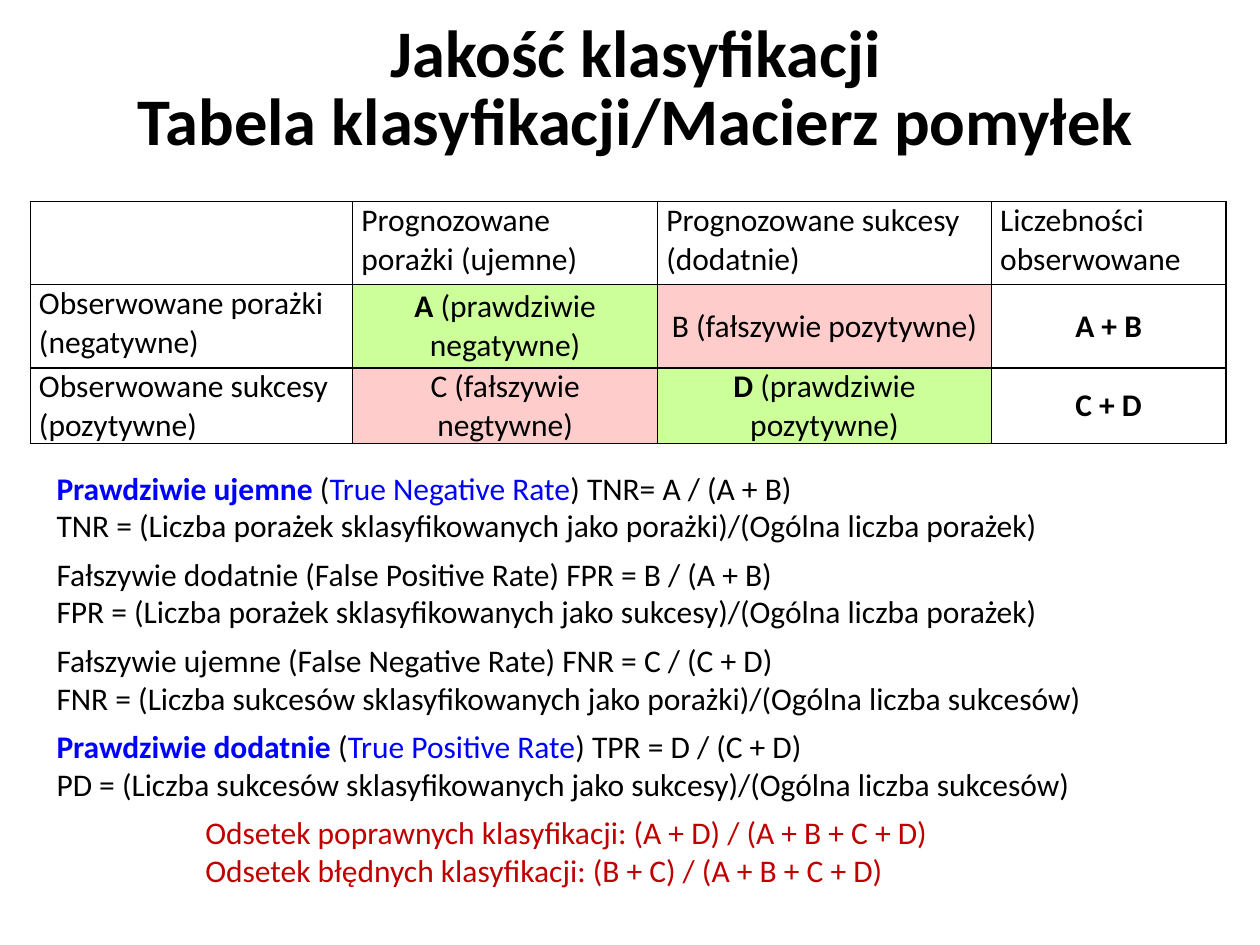
import dataclasses

import lxml.etree
import pptx
import pptx.dml.color
import pptx.enum.text
import pptx.oxml.ns
import pptx.util

Pt = pptx.util.Pt
ALIGN = pptx.enum.text.PP_ALIGN
ANCHOR = pptx.enum.text.MSO_ANCHOR


@dataclasses.dataclass(frozen=True)
class Theme:
    font: str = "Calibri"
    title_size: int = 38
    title_spacing: int = 39
    body_size: int = 18
    text: str = "000000"
    key_term: str = "0000FF"
    summary: str = "C00000"
    correct: str = "CCFF99"
    wrong: str = "FFCCCC"
    border: str = "000000"


THEME = Theme()

TITLE = ["Jakość klasyfikacji", "Tabela klasyfikacji/Macierz pomyłek"]

# A run is (text, bold, colour).
PLAIN = (False, THEME.text)
BOLD = (True, THEME.text)
TERM = (False, THEME.key_term)
BOLD_TERM = (True, THEME.key_term)

COLUMN_WIDTHS = [184.3, 174.2, 190.8, 133.9]
ROW_HEIGHTS = [47.5, 47.5, 42]
HEADERS = ["", "Prognozowane porażki (ujemne)", "Prognozowane sukcesy (dodatnie)",
           "Liczebności\vobserwowane"]
# Each row: label, then (runs, fill) for the predicted classes and the total.
MATRIX_ROWS = [
    ("Obserwowane porażki (negatywne)", [
        ([("A", *BOLD), (" (prawdziwie negatywne)", *PLAIN)], THEME.correct),
        ([("B (fałszywie pozytywne)", *PLAIN)], THEME.wrong),
        ([("A + B", *BOLD)], None)]),
    ("Obserwowane sukcesy (pozytywne)", [
        ([("C (fałszywie negtywne)", *PLAIN)], THEME.wrong),
        ([("D", *BOLD), (" (prawdziwie pozytywne)", *PLAIN)], THEME.correct),
        ([("C + D", *BOLD)], None)]),
]

# Each rate: definition runs, then the same rate in words.
RATES = [
    ([("Prawdziwie ujemne ", *BOLD_TERM), ("(", *PLAIN), ("True Negative Rate", *TERM),
      (") TNR= A / (A + B)", *PLAIN)],
     "TNR = (Liczba porażek sklasyfikowanych jako porażki)/(Ogólna liczba porażek)"),
    ([("Fałszywie dodatnie (False Positive Rate) FPR = B / (A + B)", *PLAIN)],
     "FPR = (Liczba porażek sklasyfikowanych jako sukcesy)/(Ogólna liczba porażek)"),
    ([("Fałszywie ujemne (False Negative Rate) FNR = C / (C + D)", *PLAIN)],
     "FNR = (Liczba sukcesów sklasyfikowanych jako porażki)/(Ogólna liczba sukcesów)"),
    ([("Prawdziwie dodatnie ", *BOLD_TERM), ("(", *PLAIN), ("True Positive Rate", *TERM),
      (") TPR = D / (C + D)", *PLAIN)],
     "PD = (Liczba sukcesów sklasyfikowanych jako sukcesy)/(Ogólna liczba sukcesów)"),
]
SUMMARY = ["Odsetek poprawnych klasyfikacji: (A + D) / (A + B + C + D)",
           "Odsetek błędnych klasyfikacji: (B + C) / (A + B + C + D)"]


def rgb(colour):
    return pptx.dml.color.RGBColor.from_string(colour)


def write_runs(paragraph, runs, size=THEME.body_size):
    """Add (text, bold, colour) runs; a vertical tab becomes a line break."""
    for text, bold, colour in runs:
        for index, line in enumerate(text.split("\v")):
            if index:
                paragraph.add_line_break()
            run = paragraph.add_run()
            run.text = line
            run.font.name = THEME.font
            run.font.size = Pt(size)
            run.font.bold = bold
            run.font.color.rgb = rgb(colour)


def add_text_box(slide, left, top, width, height, paragraphs, size):
    """Add a wrapping text box with one paragraph per list of runs."""
    shape = slide.shapes.add_textbox(Pt(left), Pt(top), Pt(width), Pt(height))
    text_frame = shape.text_frame
    text_frame.word_wrap = True
    for index, runs in enumerate(paragraphs):
        paragraph = text_frame.add_paragraph() if index else text_frame.paragraphs[0]
        write_runs(paragraph, runs, size)
    return text_frame


def add_title(slide):
    paragraphs = [[(line, *BOLD)] for line in TITLE]
    text_frame = add_text_box(slide, 5, 3.6, 717, 96.5, paragraphs, THEME.title_size)
    text_frame.vertical_anchor = ANCHOR.MIDDLE
    for paragraph in text_frame.paragraphs:
        paragraph.alignment = ALIGN.CENTER
        paragraph.line_spacing = Pt(THEME.title_spacing)


def add_borders(cell):
    """Put the four lines ahead of the fill, as the schema orders them."""
    properties = cell._tc.get_or_add_tcPr()
    qn = pptx.oxml.ns.qn
    for position, side in enumerate(["a:lnL", "a:lnR", "a:lnT", "a:lnB"]):
        line = lxml.etree.Element(qn(side), w=str(Pt(1)))
        fill = lxml.etree.SubElement(line, qn("a:solidFill"))
        lxml.etree.SubElement(fill, qn("a:srgbClr"), val=THEME.border)
        properties.insert(position, line)


def fill_cell(cell, runs, fill=None, centred=False):
    cell.margin_left = cell.margin_right = Pt(5)
    cell.margin_top = cell.margin_bottom = Pt(0)
    if fill:
        cell.fill.solid()
        cell.fill.fore_color.rgb = rgb(fill)
    else:
        cell.fill.background()
    if centred:
        cell.vertical_anchor = ANCHOR.MIDDLE
        cell.text_frame.paragraphs[0].alignment = ALIGN.CENTER
    write_runs(cell.text_frame.paragraphs[0], runs)
    add_borders(cell)


def add_confusion_matrix(slide):
    table = slide.shapes.add_table(
        len(ROW_HEIGHTS), len(COLUMN_WIDTHS), Pt(17.3), Pt(115.2),
        Pt(sum(COLUMN_WIDTHS)), Pt(sum(ROW_HEIGHTS))).table
    table.first_row = table.horz_banding = False
    for column, width in zip(table.columns, COLUMN_WIDTHS):
        column.width = Pt(width)
    for row, height in zip(table.rows, ROW_HEIGHTS):
        row.height = Pt(height)
    for column, header in enumerate(HEADERS):
        fill_cell(table.cell(0, column), [(header, *PLAIN)] if header else [])
    for row, (label, entries) in enumerate(MATRIX_ROWS, start=1):
        fill_cell(table.cell(row, 0), [(label, *PLAIN)])
        for column, (runs, fill) in enumerate(entries, start=1):
            fill_cell(table.cell(row, column), runs, fill, centred=True)


def add_rates(slide):
    paragraphs = []
    for definition, in_words in RATES:
        paragraphs += [definition, [(in_words, *PLAIN)]]
    paragraphs += [[(line, False, THEME.summary)] for line in SUMMARY]
    text_frame = add_text_box(slide, 25.2, 264.2, 669, 250, paragraphs, THEME.body_size)
    text_frame.auto_size = pptx.enum.text.MSO_AUTO_SIZE.SHAPE_TO_FIT_TEXT
    rate_end = 2 * len(RATES)
    for paragraph in text_frame.paragraphs[1:rate_end:2]:
        paragraph.space_after = Pt(6)
    for paragraph in text_frame.paragraphs[rate_end:]:
        paragraph._p.get_or_add_pPr().set("marL", str(Pt(85)))


def main():
    presentation = pptx.Presentation()
    presentation.slide_width = Pt(720)
    presentation.slide_height = Pt(540)
    slide = presentation.slides.add_slide(presentation.slide_layouts[6])
    add_rates(slide)
    add_confusion_matrix(slide)
    add_title(slide)
    presentation.save("out.pptx")


if __name__ == "__main__":
    main()
